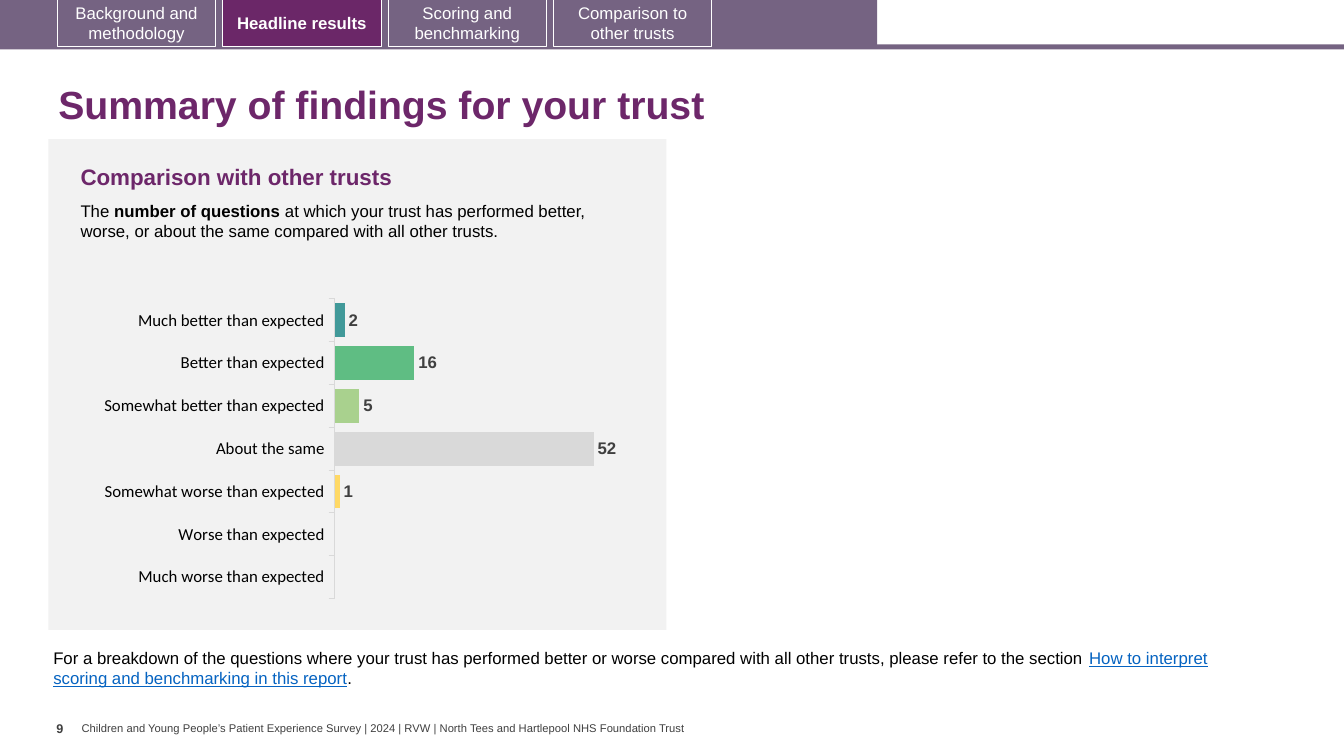
from lxml import etree
from pptx import Presentation
from pptx.chart.data import CategoryChartData
from pptx.dml.color import RGBColor
from pptx.enum.chart import XL_CHART_TYPE, XL_LABEL_POSITION, XL_TICK_MARK
from pptx.enum.shapes import MSO_SHAPE
from pptx.enum.text import MSO_ANCHOR, PP_ALIGN
from pptx.oxml.ns import qn
from pptx.util import Inches, Pt

PLUM, MAUVE, GREY, WHITE, BLACK = "6D276A", "756382", "404040", "FFFFFF", "000000"
LINK = "0563C1"

TABS = ["Background and methodology", "Headline results",
        "Scoring and benchmarking", "Comparison to other trusts"]
ACTIVE = 1

# Each run: text, colour, bold, underline
TITLE = [("Summary of findings for your trust", PLUM, True, False)]
HEAD = [("Comparison with other trusts", PLUM, True, False)]
INTRO = [
    ("The ", BLACK, False, False),
    ("number of questions ", BLACK, True, False),
    ("at which your trust has performed better, worse, or about the same "
     "compared with all other trusts.", BLACK, False, False),
]
NOTE = [
    ("For a breakdown of the questions where your trust has performed better or worse "
     "compared with all other trusts, please refer to the section ", BLACK, False, False),
    ("How to interpret scoring and benchmarking in this report", LINK, False, True),
    (".", BLACK, False, False),
]
PAGE = [("9", GREY, True, False)]
FOOTER = [("Children and Young People’s Patient Experience Survey | 2024 | RVW | "
           "North Tees and Hartlepool NHS Foundation Trust", GREY, False, False)]

RESULTS = [
    ("Much better than expected", 2, "419999"),
    ("Better than expected", 16, "5FBD83"),
    ("Somewhat better than expected", 5, "A9D18E"),
    ("About the same", 52, "D9D9D9"),
    ("Somewhat worse than expected", 1, "FFD966"),
    ("Worse than expected", None, "F1BE48"),
    ("Much worse than expected", None, "E87722"),
]
PLOT = {"x": 0.467, "y": 0.072, "w": 0.476, "h": 0.872}


def paint(target, color):
    """Give a fill or line format a solid colour."""
    target.solid()
    target.fore_color.rgb = RGBColor.from_string(color)


def style(font, size, color, bold=False, name="Arial"):
    font.name, font.size, font.bold = name, Pt(size), bold
    font.color.rgb = RGBColor.from_string(color)


def add_rect(slide, box, color):
    rect = slide.shapes.add_shape(MSO_SHAPE.RECTANGLE, *map(Inches, box))
    rect.shadow.inherit = False
    paint(rect.fill, color)
    rect.line.fill.background()
    return rect


def add_text(slide, box, runs, size, anchor=MSO_ANCHOR.TOP, wrap=True, inset=(0.1, 0.05)):
    frame = slide.shapes.add_textbox(*map(Inches, box)).text_frame
    frame.word_wrap, frame.vertical_anchor = wrap, anchor
    frame.margin_left = frame.margin_right = Inches(inset[0])
    frame.margin_top = frame.margin_bottom = Inches(inset[1])
    para = frame.paragraphs[0]
    for text, color, bold, under in runs:
        run = para.add_run()
        run.text = text
        style(run.font, size, color, bold)
        if under:
            run.font.underline = True
    return para


def add_tabs(slide):
    for i, label in enumerate(TABS):
        active = i == ACTIVE
        tab = add_rect(slide, (0.57 + 1.64 * i, -0.01, 1.57, 0.47),
                       "6B2768" if active else MAUVE)
        paint(tab.line.fill, WHITE)
        tab.line.width = Pt(0.75)
        frame = tab.text_frame
        frame.text = label
        frame.word_wrap, frame.vertical_anchor = True, MSO_ANCHOR.MIDDLE
        para = frame.paragraphs[0]
        para.alignment = PP_ALIGN.CENTER
        style(para.runs[0].font, 12, WHITE, active)


def place_plot(chart):
    """Fix the inner plot area as shares of the chart frame."""
    area = chart.element.find(".//" + qn("c:plotArea"))
    layout = area.find(qn("c:layout"))
    if layout is None:
        layout = etree.Element(qn("c:layout"))
        area.insert(0, layout)
    manual = etree.SubElement(layout, qn("c:manualLayout"))
    parts = [("layoutTarget", "inner"), ("xMode", "edge"), ("yMode", "edge")]
    for tag, value in parts + list(PLOT.items()):
        etree.SubElement(manual, qn("c:" + tag)).set("val", str(value))


def add_bars(slide):
    names, counts, colors = zip(*RESULTS)
    data = CategoryChartData(number_format="0")
    data.categories = names
    data.add_series("Series 1", counts)
    box = map(Inches, (0.41, 2.72, 6.23, 3.41))
    chart = slide.shapes.add_chart(XL_CHART_TYPE.BAR_CLUSTERED, *box, data).chart
    chart.has_legend = chart.has_title = False
    style(chart.font, 10, BLACK, name="Calibri")

    cats = chart.category_axis
    cats.reverse_order = True
    cats.major_tick_mark = XL_TICK_MARK.OUTSIDE
    cats.has_major_gridlines = False
    style(cats.tick_labels.font, 12, BLACK, name="Calibri")
    paint(cats.format.line.fill, "D9D9D9")
    cats.format.line.width = Pt(0.75)

    scale = chart.value_axis
    scale.minimum_scale, scale.maximum_scale = 0, 60
    scale.has_major_gridlines = False
    scale.visible = False

    plot = chart.plots[0]
    plot.gap_width = 27
    plot.vary_by_categories = False
    plot.has_data_labels = True
    labels = plot.data_labels
    labels.show_value = True
    labels.position = XL_LABEL_POSITION.OUTSIDE_END
    labels.number_format, labels.number_format_is_linked = "0", False
    style(labels.font, 12, GREY, True)
    for i, color in enumerate(colors):
        paint(plot.series[0].points[i].format.fill, color)
    place_plot(chart)


def main():
    deck = Presentation()
    deck.slide_width, deck.slide_height = Inches(13.33), Inches(7.5)
    slide = deck.slides.add_slide(deck.slide_layouts[6])

    add_text(slide, (0.81, 7.16, 6.1, 0.13), FOOTER, 8, MSO_ANCHOR.MIDDLE, False, (0, 0))
    add_rect(slide, (0, 0.44, 13.33, 0.05), MAUVE)
    add_rect(slide, (0, 0, 8.7, 0.47), MAUVE)
    add_tabs(slide)

    title = add_text(slide, (0.48, 0.7, 12.49, 0.72), TITLE, 28, MSO_ANCHOR.MIDDLE)
    title.line_spacing = 0.9
    add_rect(slide, (0.48, 1.38, 6.13, 4.87), "F2F2F2")
    add_text(slide, (0.7, 1.57, 5.52, 0.37), HEAD, 16)
    add_text(slide, (0.7, 1.94, 5.29, 0.71), INTRO, 12)
    add_text(slide, (0.43, 6.38, 12.21, 0.5), NOTE, 12)
    add_text(slide, (0.56, 7.1, 0.25, 0.4), PAGE, 9, wrap=False, inset=(0, 0.05))
    add_bars(slide)
    deck.save("out.pptx")


if __name__ == "__main__":
    main()
